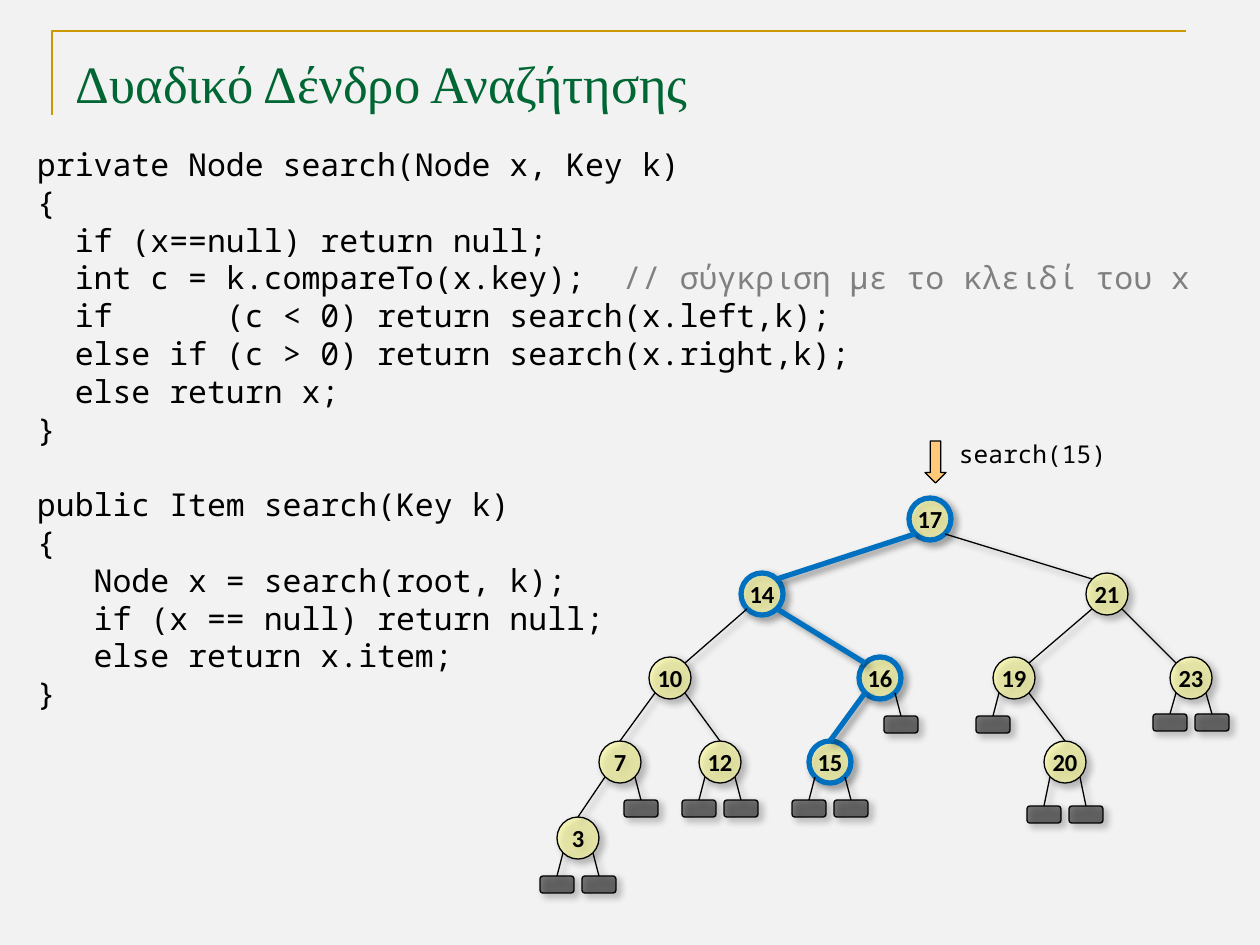
from lxml.etree import SubElement
from pptx import Presentation
from pptx.dml.color import RGBColor
from pptx.enum.shapes import MSO_CONNECTOR, MSO_SHAPE
from pptx.enum.text import MSO_ANCHOR, PP_ALIGN
from pptx.oxml.ns import qn
from pptx.util import Pt

SCALE = 914400 / 126  # EMU in one px
BLACK, BLUE, GREY = "000000", "0070C0", "808080"
MONO = "Noto Sans Mono"
NODE, LEAF_W, LEAF_H = 42, 34, 17
SIDE = 15  # offset from a node's centre to where its edges start

# Each line is a list of (text, colour) spans
SEARCH_NODE = [
    [("private Node search(Node x, Key k)", BLACK)],
    [("{", BLACK)],
    [("  if (x==null) return null;", BLACK)],
    [("  int c = k.compareTo(x.key);  ", BLACK),
     ("// σύγκριση με το κλειδί του x", GREY)],
    [("  if      (c < 0) return search(x.left,k);", BLACK)],
    [("  else if (c > 0) return search(x.right,k);", BLACK)],
    [("  else return x;", BLACK)],
    [("}", BLACK)],
]
SEARCH_ITEM = [
    [("public Item search(Key k)", BLACK)],
    [("{", BLACK)],
    [("   Node x = search(root, k);", BLACK)],
    [("   if (x == null) return null;", BLACK)],
    [("   else return x.item;", BLACK)],
    [("}", BLACK)],
]

# key: (centre x, level, parent key)
TREE = {
    17: (930, 0, None),
    14: (762, 1, 17), 21: (1107, 1, 17),
    10: (670, 2, 14), 16: (880, 2, 14), 19: (1014, 2, 21), 23: (1191, 2, 21),
    7: (620, 3, 10), 12: (720, 3, 10), 15: (830, 3, 16), 20: (1065, 3, 19),
    3: (578, 4, 7),
}
LEVEL_Y = [519, 594, 678, 762, 838]
SEARCH_ROUTE = {17, 14, 16, 15}
LEAF_DROP = {20: 44, 23: 36}  # the other leaves hang 38 below the centre


def px(*values):
    return [round(value * SCALE) for value in values]


def color(value):
    return RGBColor.from_string(value)


def set_line(shape, line_color, width):
    shape.line.color.rgb = color(line_color)
    shape.line.width = Pt(width)


def set_alpha(parent, percent):
    SubElement(parent, qn("a:alpha"), val=str(percent * 1000))


def add_shadow(shape):
    effects = SubElement(shape._element.spPr, qn("a:effectLst"))
    shadow = SubElement(effects, qn("a:outerShdw"), blurRad=str(Pt(4)),
                        dist=str(Pt(3)), dir=str(45 * 60000), rotWithShape="0")
    set_alpha(SubElement(shadow, qn("a:srgbClr"), val=BLACK), 40)


def write_text(box, lines, *, size, font, bold=False, align=PP_ALIGN.LEFT,
               anchor=MSO_ANCHOR.TOP, insets=(13, 6, 13, 6), wrap=True,
               pitch=None, gap_at=None):
    frame = box.text_frame
    frame.word_wrap = wrap
    frame.vertical_anchor = anchor
    (frame.margin_left, frame.margin_top,
     frame.margin_right, frame.margin_bottom) = px(*insets)
    for index, line in enumerate(lines):
        para = frame.add_paragraph() if index else frame.paragraphs[0]
        para.alignment = align
        if pitch:
            para.line_spacing = Pt(pitch)
        if index == gap_at:
            para.space_before = Pt(pitch)
        for text, text_color in line:
            span = para.add_run()
            span.text = text
            span.font.size = Pt(size)
            span.font.name = font
            span.font.bold = bold
            span.font.color.rgb = color(text_color)


def add_text(page, at, lines, **text_format):
    write_text(page.shapes.add_textbox(*px(*at)), lines, **text_format)


def add_box(page, kind, at, fill, line_color=BLACK, width=0.75, alpha=None):
    box = page.shapes.add_shape(kind, *px(*at))
    box.fill.solid()
    box.fill.fore_color.rgb = color(fill)
    set_line(box, line_color, width)
    if alpha is None:
        box.shadow.inherit = False
    else:
        set_alpha(box._element.spPr.find(qn("a:solidFill"))[0], alpha)
        add_shadow(box)
    return box


def add_edge(page, start, end, line_color=BLACK, width=0.75):
    edge = page.shapes.add_connector(MSO_CONNECTOR.STRAIGHT, *px(*start, *end))
    set_line(edge, line_color, width)
    add_shadow(edge)


def add_node(page, key):
    x, level, _ = TREE[key]
    style = (BLUE, 3) if key in SEARCH_ROUTE else (BLACK, 0.75)
    at = (x - NODE / 2, LEVEL_Y[level] - NODE / 2, NODE, NODE)
    node = add_box(page, MSO_SHAPE.OVAL, at, "FFFF99", *style, alpha=60)
    write_text(node, [[(str(key), BLACK)]], size=14, font="Calibri", bold=True,
               align=PP_ALIGN.CENTER, anchor=MSO_ANCHOR.MIDDLE,
               insets=(0, 0, 0, 0), wrap=False)


def add_branch(page, key):
    """Join a node to its parent; lower levels are met at the top."""
    x, level, parent = TREE[key]
    parent_x, parent_level, _ = TREE[parent]
    side = SIDE if x > parent_x else -SIDE
    start = (parent_x + side, LEVEL_Y[parent_level] + SIDE)
    if level < 3:
        end = (x - side, LEVEL_Y[level] - SIDE)
    else:
        end = (x, LEVEL_Y[level] - NODE / 2)
    style = (BLUE, 3) if key in SEARCH_ROUTE else (BLACK, 0.75)
    add_edge(page, start, end, *style)


def add_leaves(page, key):
    """Hang an empty leaf on each side that has no child."""
    x, level, _ = TREE[key]
    y = LEVEL_Y[level]
    child_sides = {child_x > x for child_x, _, parent in TREE.values()
                   if parent == key}
    for is_right in {False, True} - child_sides:
        sign = 1 if is_right else -1
        leaf_x, top = x + sign * NODE / 2, y + LEAF_DROP.get(key, 38)
        leaf = add_box(page, MSO_SHAPE.ROUNDED_RECTANGLE,
                       (leaf_x - LEAF_W / 2, top, LEAF_W, LEAF_H),
                       BLACK, alpha=50)
        leaf.adjustments[0] = 0.17
        add_edge(page, (leaf_x, top), (x + sign * SIDE, y + SIDE))


def add_title_rule(page):
    builder = page.shapes.build_freeform(52, 115, scale=SCALE)
    builder.add_line_segments([(52, 31), (1186, 31)], close=False)
    rule = builder.convert_to_shape()
    rule.fill.background()
    set_line(rule, "CC9900", 1.5)
    rule.shadow.inherit = False


def main():
    deck = Presentation()
    deck.slide_width, deck.slide_height = px(1260, 945)
    page = deck.slides.add_slide(deck.slide_layouts[6])
    page.background.fill.solid()
    page.background.fill.fore_color.rgb = color("F2F2F2")

    # Title and code
    add_title_rule(page)
    add_text(page, (63, 38, 1134, 67),
             [[("Δυαδικό Δένδρο Αναζήτησης", "006633")]],
             size=30, font="Times New Roman", insets=(13, 13, 13, 0))
    add_text(page, (24, 136, 1236, 585), SEARCH_NODE + SEARCH_ITEM,
             size=18, font=MONO, insets=(13, 9, 13, 6), pitch=21.6,
             gap_at=len(SEARCH_NODE))

    # Search tree
    for key in TREE:
        add_node(page, key)
    for key, (_, _, parent) in TREE.items():
        if parent is not None:
            add_branch(page, key)
    for key in TREE:
        add_leaves(page, key)

    # Call that starts at the root
    add_box(page, MSO_SHAPE.DOWN_ARROW, (925, 441, 21, 42), "FFC979")
    add_text(page, (946, 431, 174, 43), [[("search(15)", BLACK)]],
             size=14, font=MONO, insets=(13, 8, 13, 6), pitch=16.8)

    deck.save("out.pptx")


if __name__ == "__main__":
    main()
